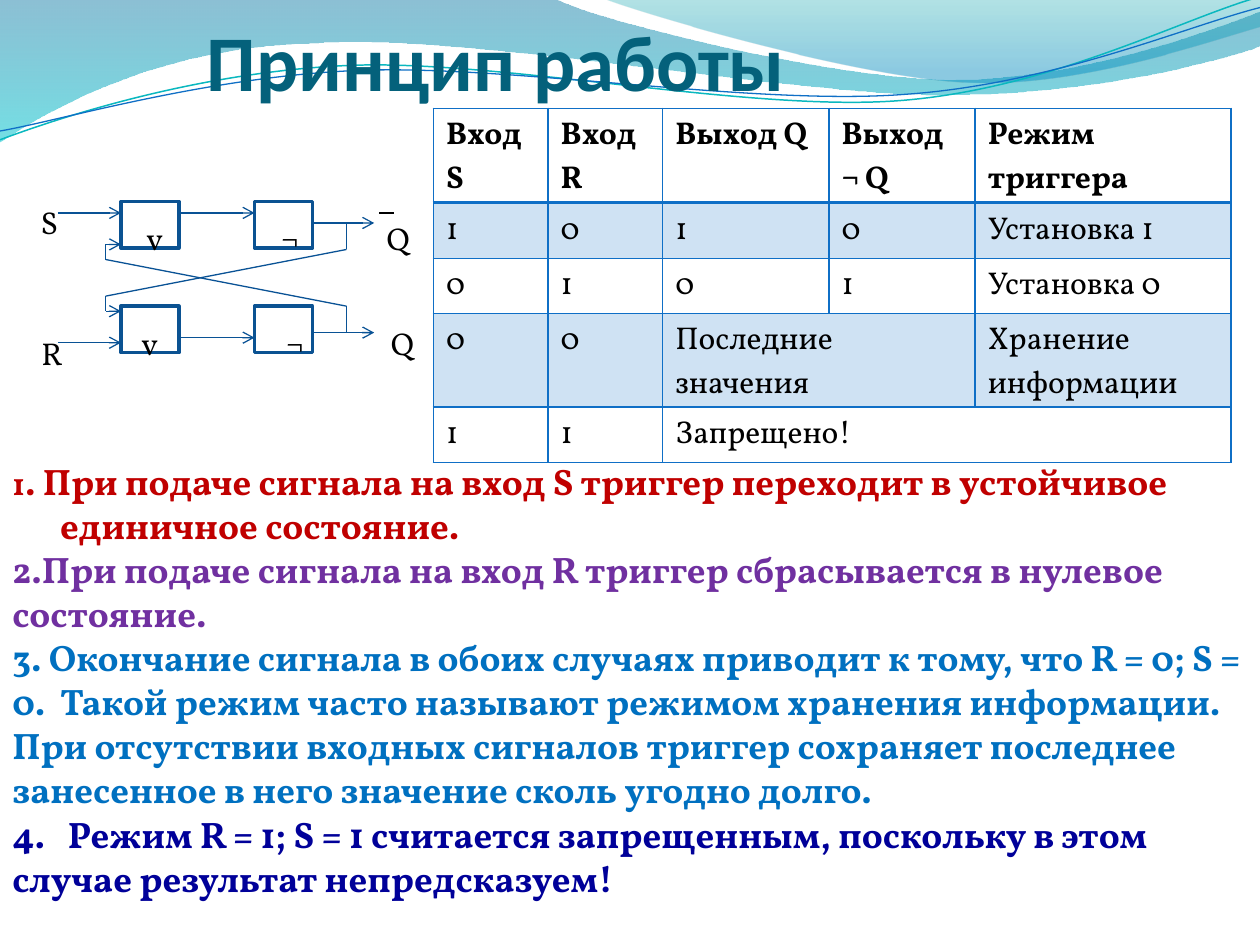
from lxml.etree import SubElement
from pptx import Presentation
from pptx.dml.color import RGBColor as Rgb
from pptx.enum.shapes import MSO_CONNECTOR as Link, MSO_SHAPE as Shape
from pptx.enum.text import MSO_ANCHOR as Anchor, MSO_AUTO_SIZE as Fit
from pptx.oxml.ns import qn
from pptx.util import Pt

PX = 9144
SERIF = "Vollkorn"
BLACK = Rgb(0, 0, 0)
TEAL = Rgb(0x04, 0x61, 0x7B)
GATE = Rgb(0x0B, 0x52, 0x92)
WIRE = Rgb(0x09, 0x52, 0x95)
ACCENT = Rgb(0x0F, 0x6F, 0xC6)
CYAN = Rgb(0x0A, 0xB8, 0xBF)
RED = Rgb(0xC0, 0x00, 0x00)
PURPLE = Rgb(0x70, 0x30, 0xA0)
BLUE = Rgb(0x00, 0x70, 0xC0)
NAVY = Rgb(0x00, 0x00, 0x99)


def emu(*lengths):
    """Turn px lengths into EMU."""
    return [length * PX for length in lengths]


def assign(target, values):
    """Set every attribute named in a dict."""
    for name, value in values.items():
        setattr(target, name, value)


def write(paragraph, text, color, **font):
    """Append a run with its font settings."""
    run = paragraph.add_run()
    run.text = text
    assign(run.font, {"name": SERIF, "size": Pt(18), "bold": False, **font})
    run.font.color.rgb = color


def text_area(shapes, box, **frame_format):
    """Add a wrapping text box and return its frame."""
    frame = shapes.add_textbox(*emu(*box)).text_frame
    assign(frame, {"word_wrap": True, **frame_format})
    return frame


def set_alpha(color_element, percent):
    """Give a colour element its opacity."""
    SubElement(color_element, qn("a:alpha"), val=str(percent * 1000))


def outline(shapes, box, points, segments, close):
    """Build a freeform of lines (L) and cubic curves (C) relative to a box."""
    placed = [tuple(emu(box[0] + x, box[1] + y)) for x, y in points]
    builder = shapes.build_freeform(*placed[0], scale=1.0)
    builder.add_line_segments(placed[1:], close=close)
    form = builder.convert_to_shape()
    form.shadow.inherit = False
    steps = iter(list(form._element.spPr.iter(qn("a:lnTo"))))
    for segment in segments:
        first = next(steps)
        if segment == "C":
            first.tag = qn("a:cubicBezTo")
            for control in (next(steps), next(steps)):
                first.append(control[0])
                control.getparent().remove(control)
    return form


def draw_waves(shapes, box):
    """Draw the translucent header waves and the two thin swells."""
    left_wave = ((0, 0), (440, -1), (476, 17), (664, 63), (758, 63), (853, 63), (958, 26), (1000, 9),
                 (1001, 36), (983, 44), (870, 76), (746, 75), (622, 75), (382, 28), (257, 34),
                 (129, 36), (46, 83), (-1, 113), (0, 0))
    right_wave = ((479, -1), (509, 11), (682, 62), (769, 65), (856, 69), (961, 32), (1000, 21),
                  (1000, 0), (479, -1))
    for points, segments, stops in (
        (left_wave, "LCCLCCCL", ((0, Rgb(0, 0x74, 0xA1), 45), (1, Rgb(0, 0xC6, 0xCF), 55))),
        (right_wave, "CCLL", ((0, Rgb(0, 0xA1, 0xA9), 30), (0.8, Rgb(0, 0x8B, 0xBF), 45))),
    ):
        wave = outline(shapes, box, points, segments, True)
        wave.line.fill.background()
        wave.fill.gradient()
        wave.fill.gradient_angle = 270
        for stop, (position, color, _) in zip(wave.fill.gradient_stops, stops):
            stop.position = position
            stop.color.rgb = color
        for color_element, (_, _, opacity) in zip(wave._element.spPr.iter(qn("a:srgbClr")), stops):
            set_alpha(color_element, opacity)
    for points, color, width in (
        (((0, 111), (48, 93), (158, 57), (277, 52), (395, 47), (593, 89), (713, 80),
          (833, 71), (938, 15), (998, -2)), CYAN, 0.85),
        (((0, 104), (47, 96), (164, 61), (283, 56), (403, 51), (597, 84), (717, 75),
          (836, 67), (941, 21), (1000, 6)), ACCENT, 0.75),
    ):
        swell = outline(shapes, box, points, "CCC", False)
        swell.fill.background()
        swell.line.color.rgb = color
        swell.line.width = Pt(width)


def draw_title(shapes, box):
    """Write the slide title on the bottom of its box."""
    frame = text_area(shapes, box, vertical_anchor=Anchor.BOTTOM, margin_left=0,
                      margin_right=0, margin_bottom=0)
    write(frame.paragraphs[0], "Принцип работы", TEAL, name="Calibri", size=Pt(45), bold=True)


def draw_wire(shapes, box, ends, color=WIRE, arrow=False):
    """Draw one wire between two points of the box."""
    x1, y1, x2, y2 = ends
    left, top = box[:2]
    wire = shapes.add_connector(Link.STRAIGHT, *emu(left + x1, top + y1, left + x2, top + y2))
    wire.line.color.rgb = color
    wire.line.width = Pt(0.75)
    if arrow:
        SubElement(wire.line._get_or_add_ln(), qn("a:tailEnd"), type="arrow")
    SubElement(wire._element.spPr, qn("a:effectLst"))


def draw_latch(shapes, box):
    """Draw the RS latch: four gates, crossed feedback and labels."""
    left, top = box[:2]
    for gate_y in (4, 87):
        for gate_x in (73, 179):
            gate = shapes.add_shape(Shape.RECTANGLE, *emu(left + gate_x, top + gate_y, 46, 37))
            gate.shadow.inherit = False
            gate.fill.background()
            gate.line.color.rgb = GATE
            gate.line.width = Pt(2)
    for x1, x2, heights in ((23, 73, (13, 116)), (118, 179, (13, 112)),
                            (225, 274, (21, 108)), (61, 73, (38, 91))):
        for y in heights:
            draw_wire(shapes, box, (x1, y, x2, y), arrow=True)
    for ends in ((61, 38, 61, 50), (61, 79, 61, 91), (61, 79, 252, 42),
                 (61, 50, 252, 87), (252, 42, 252, 21), (252, 87, 252, 108)):
        draw_wire(shapes, box, ends)
    draw_wire(shapes, box, (278, 13, 290, 13), BLACK)
    for label, x, y, width in (("S", 0, 0, 19), ("R", 0, 104, 23), ("v", 88, 13, 15), ("v", 88, 96, 11),
                               ("¬", 195, 13, 15), ("¬", 195, 96, 19), ("Q", 274, 13, 23), ("Q", 278, 96, 19)):
        frame = text_area(shapes, (left + x, top + y, width, 21), auto_size=Fit.SHAPE_TO_FIT_TEXT)
        write(frame.paragraphs[0], label, BLACK)


def draw_rules(shapes, box):
    """Write the four rules of the latch."""
    frame = text_area(shapes, box, auto_size=Fit.SHAPE_TO_FIT_TEXT)
    rules = (
        (". При подаче сигнала на вход S триггер переходит в устойчивое единичное состояние.", RED),
        ("2.При подаче сигнала на вход R триггер сбрасывается в нулевое состояние.", PURPLE),
        ("3. Окончание сигнала в обоих случаях приводит к тому, что R = 0; S = 0.  "
         "Такой режим часто называют режимом хранения информации.", BLUE),
        ("При отсутствии входных сигналов триггер сохраняет последнее занесенное "
         "в него значение сколь угодно долго.", BLUE),
        ("4.\tРежим R = 1; S = 1 считается запрещенным, поскольку в этом случае "
         "результат непредсказуем!", NAVY),
    )
    for i, (rule, color) in enumerate(rules):
        paragraph = frame.add_paragraph() if i else frame.paragraphs[0]
        paragraph.line_spacing = Pt(25.2)
        if i == 0:
            write(paragraph, "1", color, bold=True)
        write(paragraph, rule, color, size=Pt(21), bold=True)
    hanging = frame.paragraphs[0]._p.get_or_add_pPr()
    hanging.set("marL", str(38 * PX))
    hanging.set("indent", str(-38 * PX))
    tabs = SubElement(frame.paragraphs[-1]._p.get_or_add_pPr(), qn("a:tabLst"))
    SubElement(tabs, qn("a:tab"), pos=str(44 * PX), algn="l")


def format_cell(cell, header, shaded):
    """Give a cell its borders and fill."""
    properties = cell._tc.get_or_add_tcPr()
    for side in ("lnL", "lnR", "lnT", "lnB"):
        width = Pt(2 if header and side == "lnB" else 1)
        border = SubElement(properties, qn(f"a:{side}"), w=str(width))
        SubElement(SubElement(border, qn("a:solidFill")), qn("a:srgbClr"), val=str(ACCENT))
    if shaded:
        cell.fill.solid()
        cell.fill.fore_color.rgb = ACCENT
        set_alpha(next(properties.find(qn("a:solidFill")).iter(qn("a:srgbClr"))), 20)
    else:
        cell.fill.background()


def draw_states(shapes, box):
    """Fill the table of latch states."""
    states = (("Вход S", "Вход R", "Выход Q", "Выход ¬ Q", "Режим триггера"),
              ("1", "0", "1", "0", "Установка 1"),
              ("0", "1", "0", "1", "Установка 0"),
              ("0", "0", "Последние значения", "", "Хранение информации"),
              ("1", "1", "Запрещено!", "", ""))
    table = shapes.add_table(5, 5, *emu(*box)).table
    assign(table, {"first_row": False, "horz_banding": False})
    for column, width in zip(table.columns, emu(91, 91, 132, 116, 203)):
        column.width = width
    for row, height in zip(table.rows, emu(75, 44, 44, 74, 44)):
        row.height = height
    for r, state in enumerate(states):
        for c, value in enumerate(state):
            cell = table.cell(r, c)
            format_cell(cell, r == 0, r % 2 == 1)
            if value:
                write(cell.text_frame.paragraphs[0], value, BLACK, bold=r == 0)
    table.cell(3, 2).merge(table.cell(3, 3))
    table.cell(4, 2).merge(table.cell(4, 4))


def main():
    """Build the slide and save it."""
    deck = Presentation()
    deck.slide_width, deck.slide_height = emu(1000, 750)
    shapes = deck.slides.add_slide(deck.slide_layouts[6]).shapes
    draw_waves(shapes, (0, 0, 1000, 113))
    draw_title(shapes, (164, 23, 697, 62))
    draw_latch(shapes, (23, 156, 297, 125))
    draw_rules(shapes, (0, 359, 1000, 364))
    draw_states(shapes, (344, 86, 633, 281))
    deck.save("out.pptx")


if __name__ == "__main__":
    main()
